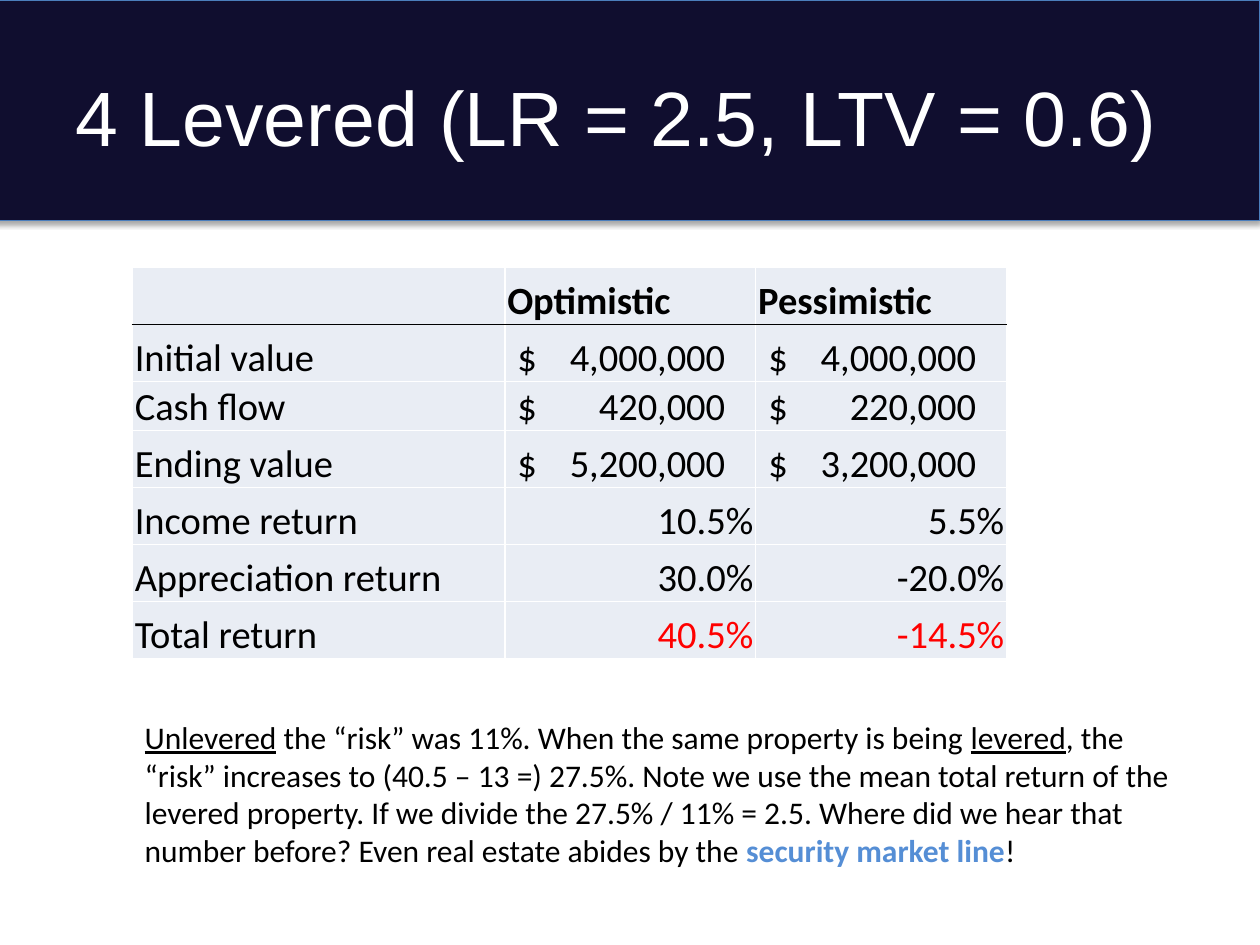
import dataclasses

import pptx
import pptx.dml.color
import pptx.enum.shapes
import pptx.enum.text
import pptx.oxml
import pptx.oxml.ns
import pptx.util


@dataclasses.dataclass(frozen=True)
class Theme:
    """Colours, fonts and type sizes of the deck."""
    navy: str = "100E2F"
    edge: str = "4B7EBC"
    cell: str = "E9EDF4"
    white: str = "FFFFFF"
    black: str = "000000"
    red: str = "FF0000"
    accent: str = "558ED5"
    heading: str = "Arial"
    body: str = "Calibri"
    title_size: int = 44
    table_size: int = 22
    note_size: int = 18


@dataclasses.dataclass(frozen=True)
class Box:
    """A region in slide units."""
    left: int
    top: int
    width: int
    height: int

    def share(self, left, top, width, height):
        """Return the inner region given as shares of this one."""
        return Box(self.left + int(self.width * left), self.top + int(self.height * top),
                   int(self.width * width), int(self.height * height))


THEME = Theme()
WIDTH, HEIGHT = pptx.util.Inches(10), pptx.util.Inches(7.5)
RETURNS = [
    ("", "Optimistic", "Pessimistic"),
    ("Initial value", "$\t4,000,000", "$\t4,000,000"),
    ("Cash flow", "$\t420,000", "$\t220,000"),
    ("Ending value", "$\t5,200,000", "$\t3,200,000"),
    ("Income return", "10.5%", "5.5%"),
    ("Appreciation return", "30.0%", "-20.0%"),
    ("Total return", "40.5%", "-14.5%"),
]
NOTE = [
    ("Unlevered", {"underline": True}),
    (" the “risk” was 11%. When the same property is being ", {}),
    ("levered", {"underline": True}),
    (", the “risk” increases to (40.5 – 13 =) 27.5%. Note we use the mean total return of the "
     "levered property. If we divide the 27.5% / 11% = 2.5. Where did we hear that number "
     "before? Even real estate abides by the ", {}),
    ("security market line", {"bold": True, "color": THEME.accent}),
    ("!", {}),
]


def rgb(value):
    """Return a colour from its hex text."""
    return pptx.dml.color.RGBColor.from_string(value)


def xml(body):
    """Parse one DrawingML element."""
    tag, rest = body[1:].split(" ", 1)
    return pptx.oxml.parse_xml(f"<{tag} {pptx.oxml.ns.nsdecls('a')} {rest}")


def place(item, box):
    """Move and size an object to a box."""
    for name, value in dataclasses.asdict(box).items():
        setattr(item, name, value)


def add_span(para, text, size, color=THEME.black, name=THEME.body, **formats):
    """Add formatted text to a paragraph."""
    span = para.add_run()
    span.text = text
    for key, value in {"size": pptx.util.Pt(size), "name": name, **formats}.items():
        setattr(span.font, key, value)
    span.font.color.rgb = rgb(color)


def add_banner(page, box, text):
    """Draw the dark banner with the title on it."""
    band = page.shapes.add_shape(pptx.enum.shapes.MSO_SHAPE.RECTANGLE,
                                 *dataclasses.astuple(box.share(-0.004, 0, 1.004, 1)))
    band.shadow.inherit = False
    band.fill.solid()
    band.fill.fore_color.rgb = rgb(THEME.navy)
    band.line.color.rgb = rgb(THEME.edge)
    band.line.width = pptx.util.Pt(0.75)
    blur, distance = pptx.util.Pt(3.1), pptx.util.Pt(1.8)
    band.element.spPr.find(pptx.oxml.ns.qn("a:effectLst")).append(xml(
        f'<a:outerShdw blurRad="{blur}" dist="{distance}" dir="5400000" rotWithShape="0">'
        f'<a:srgbClr val="{THEME.black}"><a:alpha val="35000"/></a:srgbClr></a:outerShdw>'))
    title = page.shapes.title
    title.element.addprevious(band.element)
    place(title, box.share(0.05, 0.17, 0.9, 0.71))
    title.text_frame.vertical_anchor = pptx.enum.text.MSO_ANCHOR.MIDDLE
    para = title.text_frame.paragraphs[0]
    para.alignment = pptx.enum.text.PP_ALIGN.LEFT
    add_span(para, text, THEME.title_size, THEME.white, THEME.heading)


def set_borders(cell, top, bottom):
    """Give a cell thin white sides and the given top and bottom colours."""
    sides = {"L": THEME.white, "R": THEME.white, "T": top, "B": bottom}
    for side, color in sides.items():
        cell._tc.get_or_add_tcPr().append(xml(
            f'<a:ln{side} w="{pptx.util.Pt(1)}"><a:solidFill><a:srgbClr val="{color}"/>'
            f'</a:solidFill></a:ln{side}>'))


def fill_cell(cell, text, row, column):
    """Format one cell of the returns table and write its text."""
    set_borders(cell, THEME.black if row == 1 else THEME.white,
                THEME.black if row == 0 else THEME.white)
    cell.fill.solid()
    cell.fill.fore_color.rgb = rgb(THEME.cell)
    money = "\t" in text
    margin = pptx.util.Inches(0.02)
    formats = {"vertical_anchor": pptx.enum.text.MSO_ANCHOR.BOTTOM,
               "margin_left": pptx.util.Inches(0.1) if money else margin,
               "margin_top": margin, "margin_right": margin, "margin_bottom": 0}
    for key, value in formats.items():
        setattr(cell, key, value)
    para = cell.text_frame.paragraphs[0]
    if money:
        para._p.get_or_add_pPr().append(xml(
            f'<a:tabLst ><a:tab pos="{pptx.util.Inches(1.65)}" algn="r"/></a:tabLst>'))
    elif text.endswith("%"):
        para.alignment = pptx.enum.text.PP_ALIGN.RIGHT
    if text:
        total = row == len(RETURNS) - 1 and column > 0
        add_span(para, text, THEME.table_size, THEME.red if total else THEME.black,
                 bold=row == 0)


def add_returns(page, box):
    """Add the table of optimistic and pessimistic returns."""
    table = page.shapes.add_table(len(RETURNS), len(RETURNS[0]),
                                  *dataclasses.astuple(box)).table
    table.first_row = table.horz_banding = False
    for column, share in zip(table.columns, (0.426, 0.287, 0.287)):
        column.width = int(box.width * share)
    for index, row in enumerate(table.rows):
        row.height = int(box.height * (0.118 if index == 2 else 0.147))
    for row, texts in enumerate(RETURNS):
        for column, text in enumerate(texts):
            fill_cell(table.cell(row, column), text, row, column)


def add_note(page, box):
    """Add the closing remark under the table."""
    frame = page.shapes.add_textbox(*dataclasses.astuple(box)).text_frame
    frame.word_wrap = True
    frame.auto_size = pptx.enum.text.MSO_AUTO_SIZE.SHAPE_TO_FIT_TEXT
    for text, formats in NOTE:
        add_span(frame.paragraphs[0], text, THEME.note_size, **formats)


def main():
    """Build and save the deck."""
    deck = pptx.Presentation()
    deck.slide_width, deck.slide_height = WIDTH, HEIGHT
    page = deck.slides.add_slide(deck.slide_layouts.get_by_name("Title Only"))
    sheet = Box(0, 0, WIDTH, HEIGHT)
    add_banner(page, sheet.share(0, 0, 1, 0.233), "4 Levered (LR = 2.5, LTV = 0.6)")
    add_returns(page, sheet.share(0.105, 0.283, 0.694, 0.41))
    add_note(page, sheet.share(0.105, 0.753, 0.845, 0.175))
    deck.save("out.pptx")


if __name__ == "__main__":
    main()
